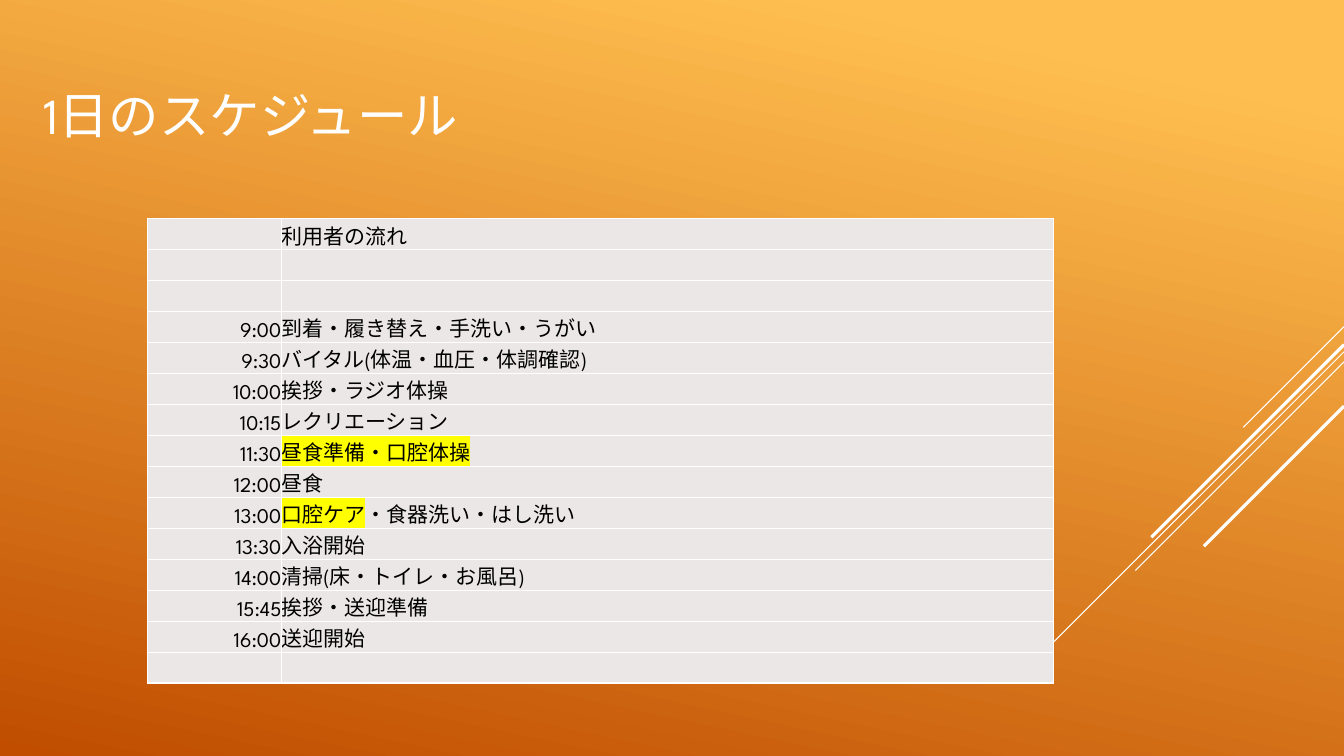
import pptx
import pptx.dml.color
import pptx.enum.shapes
import pptx.enum.text
import pptx.oxml
import pptx.oxml.ns
import pptx.util
from lxml import etree

COLORS = {
    "light": "FFBF50", "dark": "C04D00", "white": "FFFFFF",
    "cell": "ECE7E7", "ink": "000000", "marker": "FFFF00",
}
FONT = "League Spartan"
SLIDE_WIDTH, SLIDE_HEIGHT = 13.33, 7.5
TITLE_BOX = (0.33, 0.31, 9.33, 1.65)
SCHEDULE_BOX = (1.46, 2.17, 8.99, 4.61)
TIME_SHARE = 0.148

# Diagonal streaks: drop below the box top, run to the left, width in points
STREAKS_BOX = (10.07, 3.24, 3.26, 3.51)
STREAKS = [(0, 1, 0.75), (0.25, 3.26, 0.75), (0.35, 2.07, 0.75),
           (0.18, 1.91, 2.25), (0.79, 1.39, 2.25)]

# Each row: time, highlighted activity, plain activity
SCHEDULE = [
    ("", "", "利用者の流れ"),
    ("", "", ""),
    ("", "", ""),
    ("9:00", "", "到着・履き替え・手洗い・うがい"),
    ("9:30", "", "バイタル(体温・血圧・体調確認)"),
    ("10:00", "", "挨拶・ラジオ体操"),
    ("10:15", "", "レクリエーション"),
    ("11:30", "昼食準備・口腔体操", ""),
    ("12:00", "", "昼食"),
    ("13:00", "口腔ケア", "・食器洗い・はし洗い"),
    ("13:30", "", "入浴開始"),
    ("14:00", "", "清掃(床・トイレ・お風呂)"),
    ("15:45", "", "挨拶・送迎準備"),
    ("16:00", "", "送迎開始"),
    ("", "", ""),
]


def inches(*lengths):
    return [pptx.util.Inches(length) for length in lengths]


def rgb(name):
    return pptx.dml.color.RGBColor.from_string(COLORS[name])


def add_child(parent, tag, **attributes):
    return etree.SubElement(parent, pptx.oxml.ns.qn(tag), attributes)


def add_text(paragraph, text, size=15, color="ink", highlight=None):
    run = paragraph.add_run()
    run.text = text
    run.font.size = pptx.util.Pt(size)
    run.font.color.rgb = rgb(color)
    if highlight:
        marker = add_child(run._r.get_or_add_rPr(), "a:highlight")
        add_child(marker, "a:srgbClr", val=COLORS[highlight])
    run.font.name = FONT


def paint_background(slide):
    fill = slide.background.fill
    fill.gradient()
    fill.gradient_angle = 258
    for stop, color, position in zip(fill.gradient_stops, ("light", "dark"), (0.1, 1)):
        stop.color.rgb = rgb(color)
        stop.position = position


def add_streaks(slide, box):
    left, top, width, _ = box
    right = left + width
    for drop, run, weight in STREAKS:
        start = top + drop
        streak = slide.shapes.add_connector(
            pptx.enum.shapes.MSO_CONNECTOR.STRAIGHT,
            *inches(right, start, right - run, start + run))
        streak.line.color.rgb = rgb("white")
        streak.line.width = pptx.util.Pt(weight)
        add_child(streak._element.spPr, "a:effectLst")


def add_title(slide, box):
    frame = slide.shapes.add_textbox(*inches(*box)).text_frame
    frame.word_wrap = True
    frame.vertical_anchor = pptx.enum.text.MSO_ANCHOR.MIDDLE
    add_text(frame.paragraphs[0], "1日のスケジュール", size=36, color="white")


def style_cell(cell):
    cell.vertical_anchor = pptx.enum.text.MSO_ANCHOR.BOTTOM
    cell.margin_left, cell.margin_top, cell.margin_right, cell.margin_bottom = inches(
        0, 0.01, 0, 0)
    properties = cell._tc.get_or_add_tcPr()
    for side in ("a:lnL", "a:lnR", "a:lnT", "a:lnB"):
        border = add_child(properties, side, w=str(pptx.util.Pt(1)))
        add_child(add_child(border, "a:solidFill"), "a:srgbClr", val=COLORS["white"])
    cell.fill.solid()
    cell.fill.fore_color.rgb = rgb("cell")


def fill_cell(cell, parts, align):
    """Write (text, highlight) parts; an empty cell keeps the body text size."""
    paragraph = cell.text_frame.paragraphs[0]
    paragraph.alignment = align
    for text, highlight in parts:
        if text:
            add_text(paragraph, text, highlight=highlight)
    if not paragraph.runs:
        ending = add_child(paragraph._p, "a:endParaRPr", sz="1500")
        add_child(ending, "a:latin", typeface=FONT)


def add_schedule(slide, box):
    width, height = box[2:]
    table = slide.shapes.add_table(len(SCHEDULE), 2, *inches(*box)).table
    table.first_row = table.horz_banding = False
    for column, share in zip(table.columns, (TIME_SHARE, 1 - TIME_SHARE)):
        column.width = pptx.util.Inches(width * share)
    for row, (time, marked, plain) in zip(table.rows, SCHEDULE):
        row.height = pptx.util.Inches(height / len(SCHEDULE))
        time_cell, activity_cell = row.cells
        style_cell(time_cell)
        style_cell(activity_cell)
        fill_cell(time_cell, [(time, None)], pptx.enum.text.PP_ALIGN.RIGHT)
        fill_cell(activity_cell, [(marked, "marker"), (plain, None)],
                  pptx.enum.text.PP_ALIGN.LEFT)


def main():
    deck = pptx.Presentation()
    deck.slide_width, deck.slide_height = inches(SLIDE_WIDTH, SLIDE_HEIGHT)
    slide = deck.slides.add_slide(deck.slide_layouts[6])
    paint_background(slide)
    add_streaks(slide, STREAKS_BOX)
    add_title(slide, TITLE_BOX)
    add_schedule(slide, SCHEDULE_BOX)
    deck.save("out.pptx")


if __name__ == "__main__":
    main()
